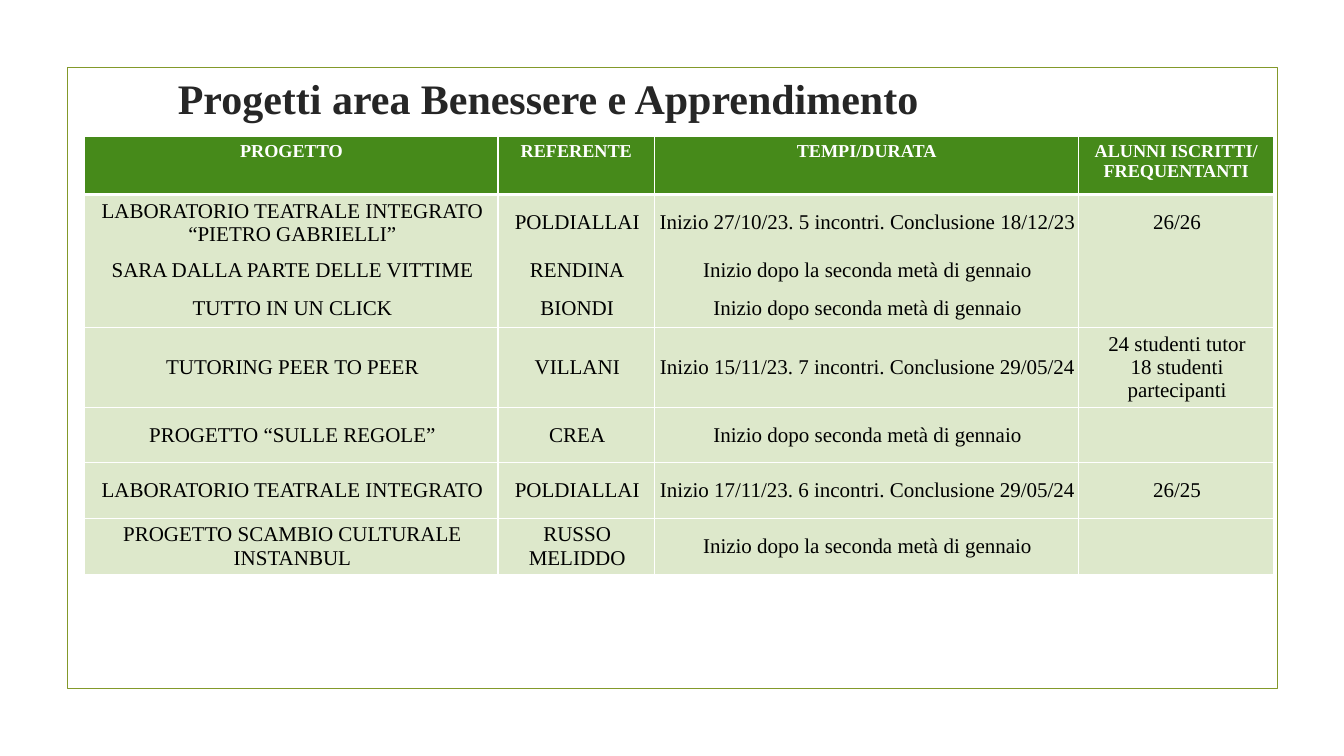
"""Build the slide listing the wellbeing and learning projects."""
from lxml import etree
from pptx import Presentation
from pptx.dml.color import RGBColor
from pptx.enum.shapes import MSO_SHAPE
from pptx.enum.text import MSO_ANCHOR, PP_ALIGN
from pptx.oxml.ns import qn
from pptx.util import Inches, Pt

RECTANGLE = MSO_SHAPE.RECTANGLE
CENTER = PP_ALIGN.CENTER
TOP, MIDDLE = MSO_ANCHOR.TOP, MSO_ANCHOR.MIDDLE
FONT = "Times New Roman"
WHITE, BLACK, TITLE_GREY = "FFFFFF", "000000", "262626"
HEADER_GREEN, PALE_GREEN, FRAME_GREEN = "468A1A", "DDE8CB", "83992A"
THIN, THICK = 0.96, 3

COLUMN_WIDTHS = [4.1, 1.55, 4.21, 1.93]
ROW_HEIGHTS = [0.58, 0.55, 0.38, 0.38, 0.79, 0.55, 0.55, 0.55]
RULES_BELOW = [THICK, 0, 0, THIN, THIN, THIN, THIN, THIN]
ROWS = [
    ["PROGETTO", "REFERENTE", "TEMPI/DURATA", "ALUNNI ISCRITTI/\nFREQUENTANTI"],
    ["LABORATORIO TEATRALE INTEGRATO “PIETRO GABRIELLI”", "POLDIALLAI",
     "Inizio 27/10/23. 5 incontri. Conclusione 18/12/23", "26/26"],
    ["SARA DALLA PARTE DELLE VITTIME", "RENDINA",
     "Inizio dopo la seconda metà di gennaio", ""],
    ["TUTTO IN UN CLICK", "BIONDI", "Inizio dopo seconda metà di gennaio", ""],
    ["TUTORING PEER TO PEER", "VILLANI",
     "Inizio 15/11/23. 7 incontri. Conclusione 29/05/24",
     "24 studenti tutor\n18 studenti partecipanti"],
    ["PROGETTO “SULLE REGOLE”", "CREA", "Inizio dopo seconda metà di gennaio", ""],
    ["LABORATORIO TEATRALE INTEGRATO", "POLDIALLAI",
     "Inizio 17/11/23. 6 incontri. Conclusione 29/05/24", "26/25"],
    ["PROGETTO SCAMBIO CULTURALE INSTANBUL", "RUSSO\nMELIDDO",
     "Inizio dopo la seconda metà di gennaio", ""],
]


def color(value):
    return RGBColor.from_string(value)


def write(frame, text, size, value, bold):
    frame.text = text
    for para in frame.paragraphs:
        para.alignment = CENTER
        para.font.name = FONT
        para.font.size = Pt(size)
        para.font.bold = bold
        para.font.color.rgb = color(value)


deck = Presentation()
deck.slide_width, deck.slide_height = Inches(13.33), Inches(7.5)
page = deck.slides.add_slide(deck.slide_layouts[5])

frame_box = page.shapes.add_shape(
    RECTANGLE, Inches(0.67), Inches(0.67), Inches(12), Inches(6.16))
frame_box.shadow.inherit = False
frame_box.fill.background()
frame_box.line.color.rgb = color(FRAME_GREEN)
frame_box.line.width = Pt(1.25)

title = page.shapes.title
title.left, title.top = Inches(0.74), Inches(0.67)
title.width, title.height = Inches(9.4), Inches(0.59)
title.text_frame.vertical_anchor = MIDDLE
write(title.text_frame, "Progetti area Benessere e Apprendimento", 30, TITLE_GREY, True)

table = page.shapes.add_table(
    len(ROWS), len(COLUMN_WIDTHS), Inches(0.84), Inches(1.35),
    Inches(sum(COLUMN_WIDTHS)), Inches(sum(ROW_HEIGHTS))).table
for column, width in zip(table.columns, COLUMN_WIDTHS):
    column.width = Inches(width)
for row, height in zip(table.rows, ROW_HEIGHTS):
    row.height = Inches(height)

for row_index, texts in enumerate(ROWS):
    is_header = row_index == 0
    rule_above = THIN if is_header else RULES_BELOW[row_index - 1]
    borders = {"a:lnL": THIN, "a:lnR": THIN,
               "a:lnT": rule_above, "a:lnB": RULES_BELOW[row_index]}
    for column_index, text in enumerate(texts):
        cell = table.cell(row_index, column_index)
        if is_header:
            cell.vertical_anchor = TOP
            write(cell.text_frame, text, 13, WHITE, True)
        else:
            cell.vertical_anchor = MIDDLE
            cell.margin_left, cell.margin_right = Inches(0.04), Inches(0.02)
            write(cell.text_frame, text, 15, BLACK, False)
        properties = cell._tc.get_or_add_tcPr()
        for tag, width in borders.items():
            border = etree.SubElement(properties, qn(tag), w=str(int(Pt(width))))
            if width:
                fill = etree.SubElement(border, qn("a:solidFill"))
                etree.SubElement(fill, qn("a:srgbClr"), val=WHITE)
            else:
                etree.SubElement(border, qn("a:noFill"))
        cell.fill.solid()
        cell.fill.fore_color.rgb = color(HEADER_GREEN if is_header else PALE_GREEN)

deck.save("out.pptx")
